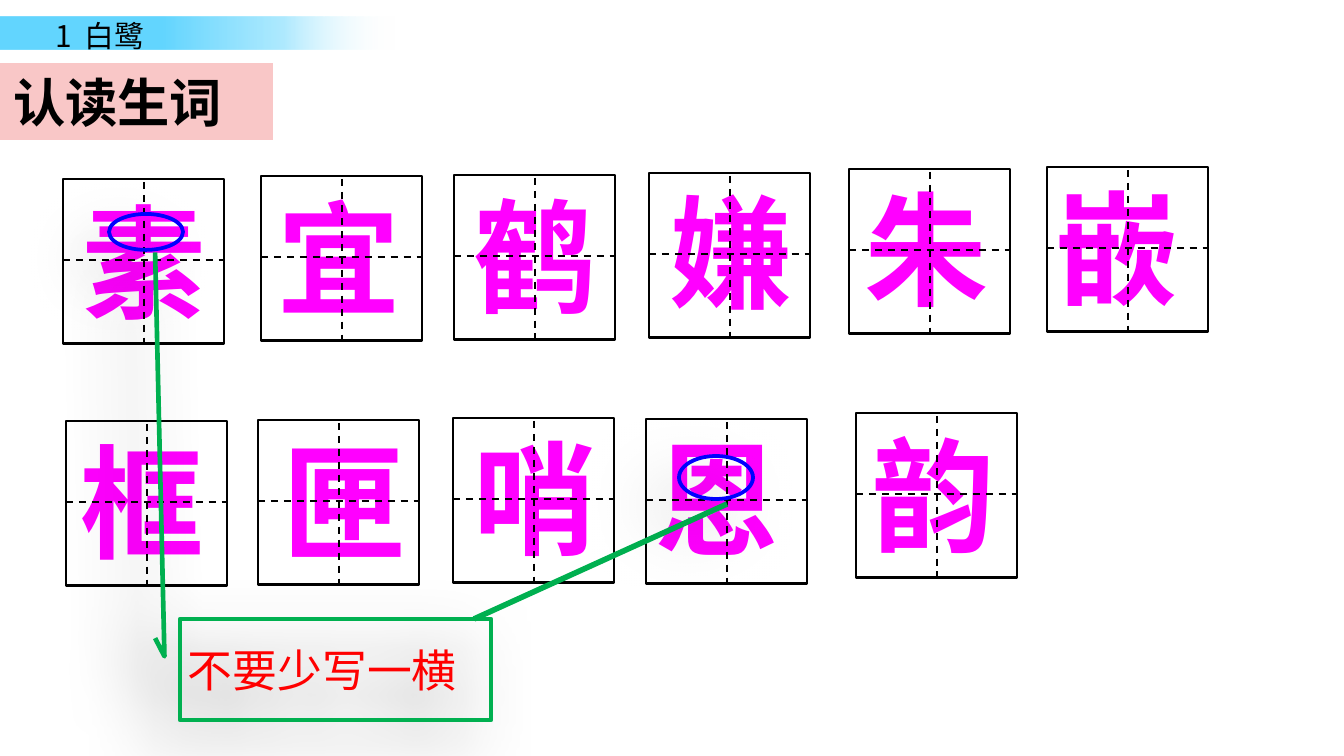
from dataclasses import dataclass

from lxml import etree
from pptx import Presentation
from pptx.dml.color import RGBColor
from pptx.enum.dml import MSO_LINE
from pptx.enum.shapes import MSO_CONNECTOR, MSO_SHAPE
from pptx.enum.text import MSO_ANCHOR, MSO_AUTO_SIZE, PP_ALIGN
from pptx.oxml.ns import qn
from pptx.shapes.autoshape import Shape
from pptx.util import Emu, Pt

RECT, OVAL, CALLOUT = MSO_SHAPE.RECTANGLE, MSO_SHAPE.OVAL, MSO_SHAPE.LINE_CALLOUT_2
STRAIGHT, DASH = MSO_CONNECTOR.STRAIGHT, MSO_LINE.DASH
TOP, MIDDLE, LEFT = MSO_ANCHOR.TOP, MSO_ANCHOR.MIDDLE, PP_ALIGN.LEFT
FIT_SHAPE = MSO_AUTO_SIZE.SHAPE_TO_FIT_TEXT

PX_PER_INCH = 134.4
FONT = "Noto Sans CJK SC"
COLORS = {
    "ink": "000000",
    "title_band": "F9C7C7",
    "word": "FF00FF",
    "note": "FF0000",
    "pointer": "00B050",
    "ring": "0000FF",
    "sky": "63D6FF",
    "pale_sky": "97E4FF",
    "white": "FFFFFF",
}
CELL_W, CELL_H, CELL_MID, CROSS_DROP = 161, 165, 81, 3
WORD_H = 160


@dataclass(frozen=True)
class Box:
    left: int
    top: int
    width: int
    height: int


@dataclass(frozen=True)
class Word:
    """A character with its text box and the corner of its practice cell."""
    char: str
    left: int
    top: int
    width: int
    cell_left: int
    cell_top: int


@dataclass(frozen=True)
class TextStyle:
    size: int
    color: str = "ink"
    bold: bool = False
    margins: tuple[int, int] = (13, 7)
    anchor: MSO_ANCHOR = TOP
    wrap: bool = True


WORDS = [
    Word("素", 73, 181, 146, 63, 179),
    Word("宜", 269, 177, 138, 261, 176),
    Word("鹤", 465, 175, 138, 454, 175),
    Word("嫌", 661, 171, 137, 649, 173),
    Word("朱", 856, 168, 146, 849, 169),
    Word("嵌", 1047, 167, 90, 1047, 167),
    Word("框", 71, 421, 83, 66, 421),
    Word("匣", 274, 421, 90, 258, 420),
    Word("哨", 465, 417, 90, 453, 418),
    Word("恩", 646, 418, 161, 646, 419),
    Word("韵", 863, 414, 90, 856, 413),
]
RINGS = [Box(109, 214, 74, 36), Box(679, 456, 74, 43)]
WORD_STYLE = TextStyle(66, "word", bold=True, margins=(9, 5))


def px(length: float) -> Emu:
    return Emu(round(length * 914400 / PX_PER_INCH))


def rgb(name: str) -> RGBColor:
    return RGBColor.from_string(COLORS[name])


def add_color(parent, name: str, alpha: int) -> None:
    """Append a colour with an opacity in percent."""
    color = etree.SubElement(parent, qn("a:srgbClr"), val=COLORS[name])
    etree.SubElement(color, qn("a:alpha"), val=str(alpha * 1000))


def add_box(shapes, kind: MSO_SHAPE, box: Box, fill: str = "",
            line: str = "", weight: float = 0) -> Shape:
    shape = shapes.add_shape(kind, px(box.left), px(box.top), px(box.width), px(box.height))
    shape.shadow.inherit = False
    if fill:
        shape.fill.solid()
        shape.fill.fore_color.rgb = rgb(fill)
    else:
        shape.fill.background()
    if line:
        shape.line.color.rgb = rgb(line)
        shape.line.width = Pt(weight)
    else:
        shape.line.fill.background()
    return shape


def add_line(shapes, start: tuple[int, int], end: tuple[int, int],
             color: str, weight: float, dashed: bool = False) -> None:
    connector = shapes.add_connector(STRAIGHT, *map(px, start + end))
    connector.line.color.rgb = rgb(color)
    connector.line.width = Pt(weight)
    if dashed:
        connector.line.dash_style = DASH
    etree.SubElement(connector.element.spPr, qn("a:effectLst"))


def write(shape: Shape, text: str, style: TextStyle) -> None:
    frame = shape.text_frame
    frame.word_wrap = style.wrap
    frame.vertical_anchor = style.anchor
    frame.margin_left = frame.margin_right = px(style.margins[0])
    frame.margin_top = frame.margin_bottom = px(style.margins[1])
    if style.anchor == TOP:
        frame.auto_size = FIT_SHAPE
    paragraph = frame.paragraphs[0]
    paragraph.alignment = LEFT
    run = paragraph.add_run()
    run.text = text
    run.font.name = FONT
    run.font.size = Pt(style.size)
    run.font.bold = style.bold
    run.font.color.rgb = rgb(style.color)
    etree.SubElement(run.font._element, qn("a:ea"), typeface=FONT)


def add_text(shapes, box: Box, text: str, style: TextStyle) -> None:
    write(shapes.add_textbox(px(box.left), px(box.top), px(box.width), px(box.height)),
          text, style)


def fade_right(shape: Shape) -> None:
    """Fill with sky blue that fades out to the right."""
    properties = shape.element.spPr
    gradient = etree.Element(qn("a:gradFill"), rotWithShape="1")
    stops = etree.SubElement(gradient, qn("a:gsLst"))
    for position, color, alpha in [(40, "sky", 100), (70, "pale_sky", 76), (97, "white", 0)]:
        stop = etree.SubElement(stops, qn("a:gs"), pos=str(position * 1000))
        add_color(stop, color, alpha)
    etree.SubElement(gradient, qn("a:lin"), ang="0", scaled="0")
    properties.replace(properties.find(qn("a:noFill")), gradient)


def cast_shadow(shape: Shape) -> None:
    """Add a soft shadow towards the lower left."""
    effects = shape.element.spPr.find(qn("a:effectLst"))
    shadow = etree.SubElement(effects, qn("a:outerShdw"), blurRad=str(Pt(35)),
                              dist=str(Pt(20)), dir=str(135 * 60000),
                              algn="ctr", rotWithShape="0")
    add_color(shadow, "ink", 50)


def add_cell(shapes, left: int, top: int) -> None:
    """Draw a practice cell with its dashed cross."""
    cell = shapes.add_group_shape().shapes
    add_box(cell, RECT, Box(left, top, CELL_W, CELL_H), line="ink", weight=1.5)
    middle_x, middle_y = left + CELL_MID, top + CELL_MID
    cross_top = top + CROSS_DROP
    add_line(cell, (left, middle_y), (left + CELL_W, middle_y), "ink", 1, dashed=True)
    add_line(cell, (middle_x, cross_top), (middle_x, cross_top + CELL_H), "ink", 1, dashed=True)


def add_note(shapes) -> None:
    note = shapes.add_group_shape().shapes
    callout = add_box(note, CALLOUT, Box(180, 619, 311, 101), line="pointer", weight=2.5)
    for index, ratio in enumerate((0.19, -0.08, 0.37, -0.05, -3.63, -0.08)):
        callout.adjustments[index] = ratio
    cast_shadow(callout)
    write(callout, "不要少写一横", TextStyle(24, "note", margins=(8, 4), anchor=MIDDLE))
    add_line(note, (474, 619), (727, 504), "pointer", 3)


def main() -> None:
    deck = Presentation()
    deck.slide_width, deck.slide_height = px(1344), px(756)
    shapes = deck.slides.add_slide(deck.slide_layouts[6]).shapes

    fade_right(add_box(shapes, RECT, Box(0, 17, 407, 33)))
    add_text(shapes, Box(42, 11, 132, 50), "1  白鹭", TextStyle(16, wrap=False))
    title = add_box(shapes, RECT, Box(0, 63, 273, 77), fill="title_band")
    write(title, "认读生词", TextStyle(28, bold=True))

    for word in WORDS:
        add_text(shapes, Box(word.left, word.top, word.width, WORD_H), word.char, WORD_STYLE)
    for word in WORDS:
        add_cell(shapes, word.cell_left, word.cell_top)
    add_note(shapes)
    for ring in RINGS:
        cast_shadow(add_box(shapes, OVAL, ring, line="ring", weight=2))

    deck.save("out.pptx")


if __name__ == "__main__":
    main()
